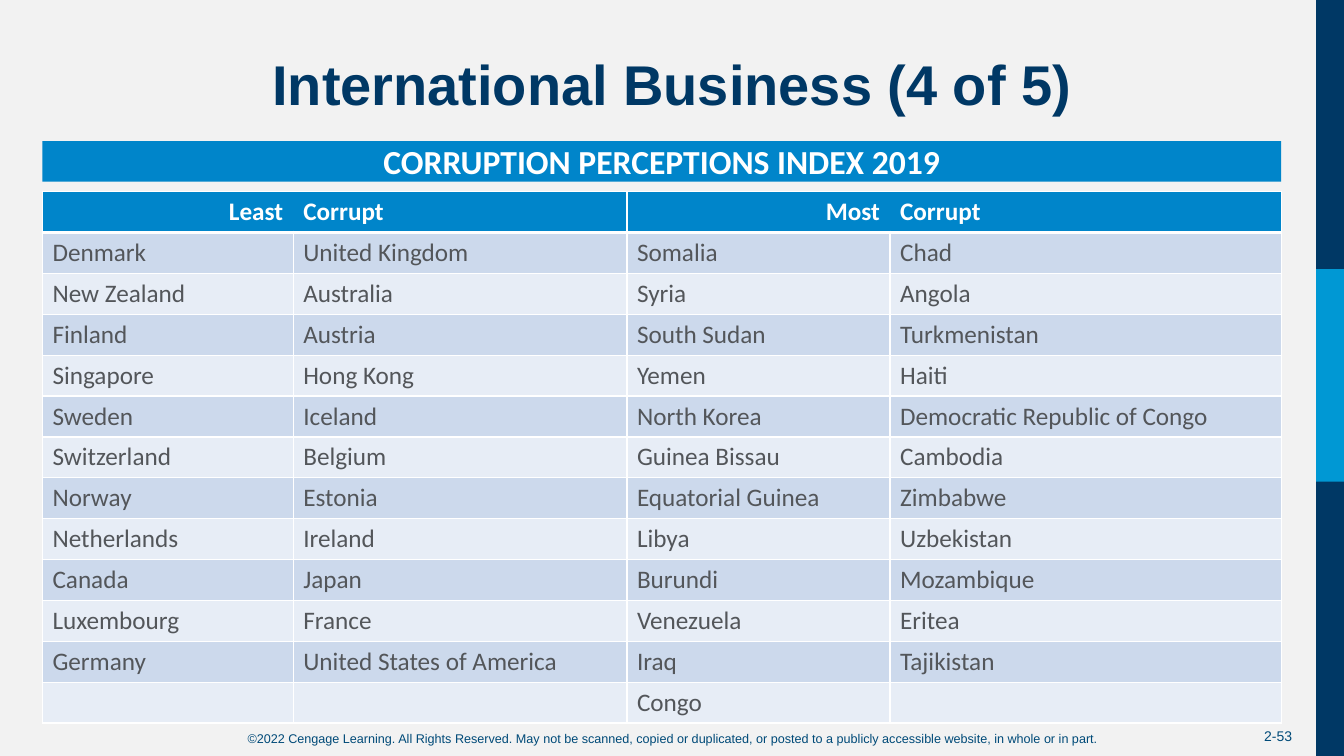
from dataclasses import dataclass

from lxml.etree import SubElement
from pptx import Presentation
from pptx.dml.color import RGBColor
from pptx.enum.shapes import MSO_SHAPE
from pptx.enum.text import MSO_ANCHOR, MSO_AUTO_SIZE, PP_ALIGN
from pptx.oxml.ns import qn
from pptx.util import Cm, Pt

NAVY, SKY, BLUE, FOOTER = "003865", "0098D4", "0085CA", "004A78"
WHITE, GREY, PAGE = "FFFFFF", "53565A", "F2F2F2"
BANDS = ("CCD9EC", "E7EDF6")
COLUMN_WIDTHS = (6.32, 8.41, 6.63, 9.86)
ROW_HEIGHT = 1.03
HEADER = ("Least", "Corrupt", "Most", "Corrupt")
COUNTRIES = (
    ("Denmark", "United Kingdom", "Somalia", "Chad"),
    ("New Zealand", "Australia", "Syria", "Angola"),
    ("Finland", "Austria", "South Sudan", "Turkmenistan"),
    ("Singapore", "Hong Kong", "Yemen", "Haiti"),
    ("Sweden", "Iceland", "North Korea", "Democratic Republic of Congo"),
    ("Switzerland", "Belgium", "Guinea Bissau", "Cambodia"),
    ("Norway", "Estonia", "Equatorial Guinea", "Zimbabwe"),
    ("Netherlands", "Ireland", "Libya", "Uzbekistan"),
    ("Canada", "Japan", "Burundi", "Mozambique"),
    ("Luxembourg", "France", "Venezuela", "Eritea"),
    ("Germany", "United States of America", "Iraq", "Tajikistan"),
    ("", "", "Congo", ""),
)


@dataclass
class Box:
    left: float
    top: float
    width: float
    height: float

    def lengths(self) -> tuple:
        return Cm(self.left), Cm(self.top), Cm(self.width), Cm(self.height)


@dataclass
class Style:
    size: float
    color: str
    font: str = "Arial"
    bold: bool = False
    align: PP_ALIGN = PP_ALIGN.LEFT


@dataclass
class Bar:
    box: Box
    color: str


@dataclass
class Label:
    box: Box
    text: str
    style: Style
    anchor: MSO_ANCHOR


SIDE_BARS = (
    Bar(Box(33.17, 0, 0.7, 19.05), NAVY),
    Bar(Box(33.17, 6.78, 0.7, 5.36), SKY),
)
LABELS = (
    Label(Box(5.03, 18.29, 23.83, 0.64),
          "©2022 Cengage Learning. All Rights Reserved. May not be scanned, copied or duplicated, "
          "or posted to a publicly accessible website, in whole or in part.",
          Style(9, FOOTER, align=PP_ALIGN.CENTER), MSO_ANCHOR.TOP),
    Label(Box(30.78, 18.03, 2.03, 1.02), "2-53",
          Style(10, FOOTER, align=PP_ALIGN.RIGHT), MSO_ANCHOR.MIDDLE),
)


def rgb(color: str) -> RGBColor:
    return RGBColor.from_string(color)


def write(tf, text: str, style: Style) -> None:
    p = tf.paragraphs[0]
    p.alignment = style.align
    r = p.add_run()
    r.text = text
    r.font.size = Pt(style.size)
    r.font.name = style.font
    r.font.bold = style.bold
    r.font.color.rgb = rgb(style.color)


def add_bar(s, bar: Bar):
    sp = s.shapes.add_shape(MSO_SHAPE.RECTANGLE, *bar.box.lengths())
    sp.shadow.inherit = False
    sp.fill.solid()
    sp.fill.fore_color.rgb = rgb(bar.color)
    sp.line.fill.background()
    return sp


def add_label(s, label: Label) -> None:
    tf = s.shapes.add_textbox(*label.box.lengths()).text_frame
    tf.word_wrap = True
    tf.vertical_anchor = label.anchor
    write(tf, label.text, label.style)


def set_title(s, text: str) -> None:
    title = s.shapes.title
    title.left, title.top, title.width, title.height = Box(1.32, 1.32, 31.22, 3.38).lengths()
    tf = title.text_frame
    tf.auto_size = MSO_AUTO_SIZE.NONE
    tf.vertical_anchor = MSO_ANCHOR.TOP
    write(tf, text, Style(40, NAVY, bold=True, align=PP_ALIGN.CENTER))
    tf.paragraphs[0].line_spacing = 0.9


def add_heading(s, text: str) -> None:
    tf = add_bar(s, Bar(Box(1.07, 3.56, 31.22, 1.02), BLUE)).text_frame
    tf.margin_top = tf.margin_bottom = 0
    tf.vertical_anchor = MSO_ANCHOR.MIDDLE
    write(tf, text, Style(24, WHITE, "Calibri", True, PP_ALIGN.CENTER))


def set_borders(cell, widths: dict[str, float]) -> None:
    """Draw white borders of the given point widths; a width of 0 hides the side."""
    tc_pr = cell._tc.get_or_add_tcPr()
    for side in "LRTB":
        ln = SubElement(tc_pr, qn(f"a:ln{side}"), w=str(Pt(widths[side])))
        if widths[side]:
            SubElement(SubElement(ln, qn("a:solidFill")), qn("a:srgbClr"), val=WHITE)
        else:
            SubElement(ln, qn("a:noFill"))


def add_index_table(s) -> None:
    rows = (HEADER, *COUNTRIES)
    box = Box(1.07, 4.83, sum(COLUMN_WIDTHS), ROW_HEIGHT * len(rows))
    table = s.shapes.add_table(len(rows), len(HEADER), *box.lengths()).table
    table.first_row = table.horz_banding = False
    for column, width in zip(table.columns, COLUMN_WIDTHS):
        column.width = Cm(width)
    for i, names in enumerate(rows):
        table.rows[i].height = Cm(ROW_HEIGHT)
        is_header = i == 0
        for j, name in enumerate(names):
            cell = table.cell(i, j)
            opens_pair = j % 2 == 0
            set_borders(cell, {
                "L": 0 if is_header and not opens_pair else 1,
                "R": 0 if is_header and opens_pair else 1,
                "T": 3 if i == 1 else 1,
                "B": 3 if is_header else 1,
            })
            cell.fill.solid()
            cell.fill.fore_color.rgb = rgb(BLUE if is_header else BANDS[(i - 1) % 2])
            align = PP_ALIGN.RIGHT if is_header and opens_pair else PP_ALIGN.LEFT
            if name:
                color = WHITE if is_header else GREY
                write(cell.text_frame, name, Style(18, color, "Calibri", is_header, align))


def main() -> None:
    prs = Presentation()
    prs.slide_width, prs.slide_height = Cm(33.87), Cm(19.05)
    s = prs.slides.add_slide(prs.slide_layouts[5])
    s.background.fill.solid()
    s.background.fill.fore_color.rgb = rgb(PAGE)
    for bar in SIDE_BARS:
        add_bar(s, bar)
    for label in LABELS:
        add_label(s, label)
    set_title(s, "International Business (4 of 5)")
    add_heading(s, "CORRUPTION PERCEPTIONS INDEX 2019")
    add_index_table(s)
    prs.save("out.pptx")


if __name__ == "__main__":
    main()
